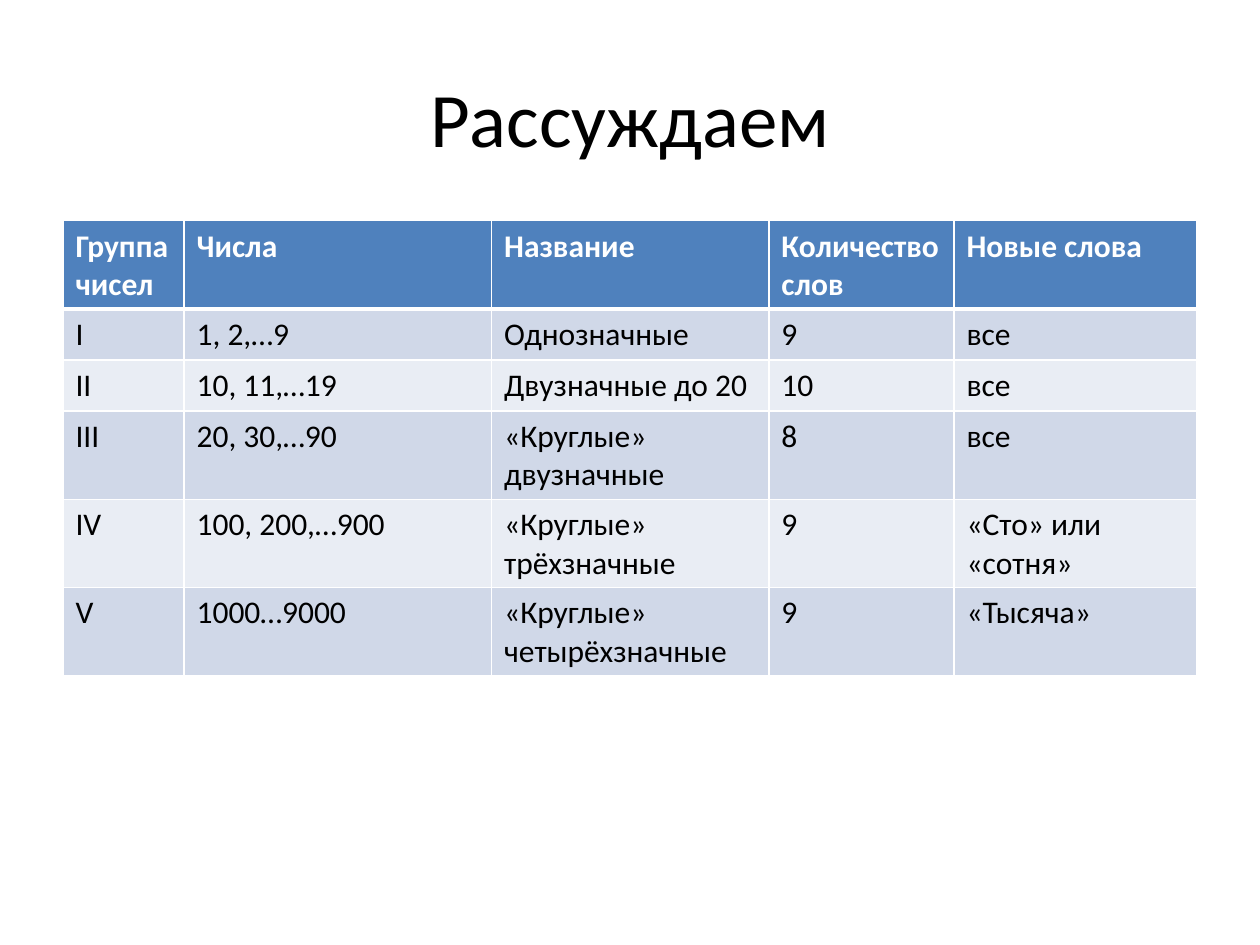
from dataclasses import dataclass

from lxml.etree import SubElement
from pptx import Presentation
from pptx.dml.color import RGBColor
from pptx.enum.text import MSO_ANCHOR, PP_ALIGN
from pptx.oxml.ns import qn
from pptx.util import Cm, Pt


@dataclass(frozen=True)
class Theme:
    font: str = "Calibri"
    title_size: int = 44
    table_size: int = 18
    text: str = "000000"
    header_text: str = "FFFFFF"
    header_fill: str = "4F81BD"
    band_fills: tuple = ("D0D8E8", "E9EDF4")
    border: str = "FFFFFF"
    border_width: int = 1
    header_border_width: int = 3


class SlideBuilder:
    def __init__(self, slide, theme):
        self.slide = slide
        self.theme = theme

    def apply_format(self, target, values):
        for name, value in values.items():
            setattr(target, name, value)

    def styled_run(self, paragraph, text, size, color, bold=False):
        run = paragraph.add_run()
        run.text = text
        self.apply_format(
            run.font, {"name": self.theme.font, "size": Pt(size), "bold": bold}
        )
        run.font.color.rgb = RGBColor.from_string(color)

    def title(self, text, left, top, width, height):
        shape = self.slide.shapes.add_textbox(
            Cm(left), Cm(top), Cm(width), Cm(height)
        )
        frame = shape.text_frame
        self.apply_format(
            frame, {"word_wrap": True, "vertical_anchor": MSO_ANCHOR.MIDDLE}
        )
        paragraph = frame.paragraphs[0]
        paragraph.alignment = PP_ALIGN.CENTER
        self.styled_run(paragraph, text, self.theme.title_size, self.theme.text)

    def borders(self, cell, widths):
        properties = cell._tc.get_or_add_tcPr()
        for side, width in widths.items():
            line = SubElement(properties, qn(f"a:ln{side}"), w=str(Pt(width)))
            fill = SubElement(line, qn("a:solidFill"))
            SubElement(fill, qn("a:srgbClr"), val=self.theme.border)

    def cell(self, cell, text, row_index):
        theme = self.theme
        is_header = row_index == 0
        widths = dict.fromkeys("LRTB", theme.border_width)
        if is_header:
            widths["B"] = theme.header_border_width
            fill, color = theme.header_fill, theme.header_text
        else:
            if row_index == 1:
                widths["T"] = theme.header_border_width
            fill = theme.band_fills[(row_index - 1) % len(theme.band_fills)]
            color = theme.text
        self.borders(cell, widths)
        cell.fill.solid()
        cell.fill.fore_color.rgb = RGBColor.from_string(fill)
        paragraph = cell.text_frame.paragraphs[0]
        self.styled_run(paragraph, text, theme.table_size, color, is_header)

    def table(self, rows, left, top, column_widths, row_height):
        table = self.slide.shapes.add_table(
            len(rows), len(column_widths), Cm(left), Cm(top),
            Cm(sum(column_widths)), Cm(row_height * len(rows)),
        ).table
        for column, width in zip(table.columns, column_widths):
            column.width = Cm(width)
        for row_index, texts in enumerate(rows):
            table.rows[row_index].height = Cm(row_height)
            for column_index, text in enumerate(texts):
                self.cell(table.cell(row_index, column_index), text, row_index)


NUMBER_GROUPS = [
    ("Группа чисел", "Числа", "Название", "Количество слов", "Новые слова"),
    ("I", "1, 2,…9", "Однозначные", "9", "все"),
    ("II", "10, 11,…19", "Двузначные до 20", "10", "все"),
    ("III", "20, 30,…90", "«Круглые» двузначные", "8", "все"),
    ("IV", "100, 200,…900", "«Круглые» трёхзначные", "9", "«Сто» или «сотня»"),
    ("V", "1000…9000", "«Круглые» четырёхзначные", "9", "«Тысяча»"),
]


def main():
    presentation = Presentation()
    presentation.slide_width = Cm(25.4)
    presentation.slide_height = Cm(19.05)
    slide = presentation.slides.add_slide(presentation.slide_layouts[6])
    builder = SlideBuilder(slide, Theme())
    builder.title("Рассуждаем", 1.27, 0.76, 22.86, 3.18)
    builder.table(NUMBER_GROUPS, 1.27, 4.45, [2.44, 6.2, 5.59, 3.73, 4.9], 1.03)
    presentation.save("out.pptx")


if __name__ == "__main__":
    main()
